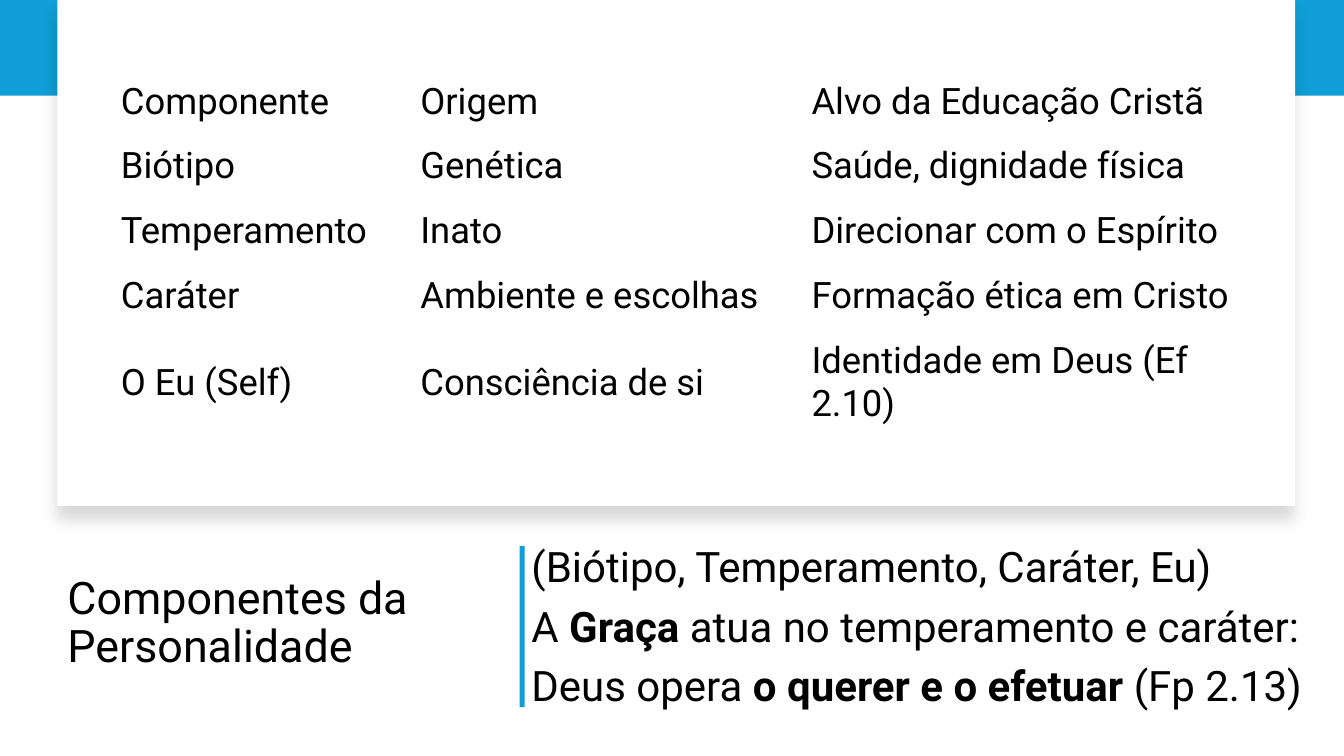
from dataclasses import dataclass

from lxml import etree
from pptx import Presentation
from pptx.dml.color import RGBColor
from pptx.enum.shapes import MSO_SHAPE
from pptx.enum.text import MSO_ANCHOR, MSO_AUTO_SIZE, PP_ALIGN
from pptx.oxml.ns import qn
from pptx.util import Pt

RECTANGLE = MSO_SHAPE.RECTANGLE
MIDDLE = MSO_ANCHOR.MIDDLE
NO_AUTOFIT = MSO_AUTO_SIZE.NONE
LEFT = PP_ALIGN.LEFT

BLUE = RGBColor(0x0F, 0x9E, 0xD5)
WHITE = RGBColor(0xFF, 0xFF, 0xFF)
BLACK = RGBColor(0x00, 0x00, 0x00)
FONT = "Roboto"
TITLE_ONLY = 5


@dataclass(frozen=True)
class Block:
    left: float
    top: float
    width: float
    height: float
    color: RGBColor

    def box(self):
        return Pt(self.left), Pt(self.top), Pt(self.width), Pt(self.height)


BAND = Block(0, 0, 960, 68.4, BLUE)
CARD = Block(41, 0, 884.2, 361.4, WHITE)
DIVIDER = Block(371.2, 390, 3.6, 115.2, BLUE)

COLUMN_WIDTHS = (213.9, 279.4, 323.3)
ROW_HEIGHTS = (46.2, 46.2, 46.2, 46.2, 77.8)
TABLE_ROWS = (
    ("Componente", "Origem", "Alvo da Educação Cristã"),
    ("Biótipo", "Genética", "Saúde, dignidade física"),
    ("Temperamento", "Inato", "Direcionar com o Espírito"),
    ("Caráter", "Ambiente e escolhas", "Formação ética em Cristo"),
    ("O Eu (Self)", "Consciência de si", "Identidade em Deus (Ef 2.10)"),
)

# Each line is a sequence of (text, bold) pieces
SUMMARY_LINES = (
    (("(Biótipo, Temperamento, Caráter, Eu)", False),),
    (("A ", False), ("Graça", True), (" atua no temperamento e caráter:", False)),
    (("Deus opera ", False), ("o querer e o efetuar", True), (" (Fp 2.13)", False)),
)


def style_paragraph(paragraph, size: float) -> None:
    paragraph.alignment = LEFT
    paragraph.font.name = FONT
    paragraph.font.size = Pt(size)
    paragraph.font.color.rgb = BLACK


def add_block(slide, block: Block):
    shape = slide.shapes.add_shape(RECTANGLE, *block.box())
    shape.shadow.inherit = False
    shape.fill.solid()
    shape.fill.fore_color.rgb = block.color
    shape.line.fill.background()
    return shape


def add_soft_shadow(shape) -> None:
    effects = shape._element.spPr.find(qn("a:effectLst"))
    shadow = etree.SubElement(
        effects, qn("a:outerShdw"), blurRad=str(Pt(11)), dist=str(Pt(10)),
        dir="5400000", algn="t", rotWithShape="0")
    color = etree.SubElement(shadow, qn("a:srgbClr"), val=str(BLACK))
    etree.SubElement(color, qn("a:alpha"), val="15000")


def format_title(slide) -> None:
    title = slide.shapes.title
    title.left, title.top = Pt(41), Pt(384.5)
    title.width, title.height = Pt(305.3), Pt(122.4)
    frame = title.text_frame
    frame.text = "Componentes da Personalidade"
    frame.word_wrap = True
    frame.auto_size = NO_AUTOFIT
    frame.vertical_anchor = MIDDLE
    paragraph = frame.paragraphs[0]
    style_paragraph(paragraph, 32)
    paragraph.line_spacing = 0.9


def add_summary(slide) -> None:
    text_box = slide.shapes.add_textbox(Pt(372.5), Pt(381), Pt(586.8), Pt(136))
    frame = text_box.text_frame
    frame.word_wrap = True
    frame.vertical_anchor = MIDDLE
    for index, pieces in enumerate(SUMMARY_LINES):
        paragraph = frame.add_paragraph() if index else frame.paragraphs[0]
        style_paragraph(paragraph, 30)
        paragraph.line_spacing = 0.9
        paragraph.space_before = Pt(10)
        for text, bold in pieces:
            run = paragraph.add_run()
            run.text = text
            run.font.bold = bold


def add_component_table(slide) -> None:
    table = slide.shapes.add_table(
        len(ROW_HEIGHTS), len(COLUMN_WIDTHS), Pt(75.6), Pt(49.7),
        Pt(sum(COLUMN_WIDTHS)), Pt(sum(ROW_HEIGHTS))).table
    table.first_row = False
    table.horz_banding = False
    for column, width in zip(table.columns, COLUMN_WIDTHS):
        column.width = Pt(width)
    for row, height, texts in zip(table.rows, ROW_HEIGHTS, TABLE_ROWS):
        row.height = Pt(height)
        for cell, text in zip(row.cells, texts):
            cell.fill.background()
            cell.vertical_anchor = MIDDLE
            cell.margin_left = cell.margin_right = Pt(10.8)
            cell.margin_top = cell.margin_bottom = Pt(5)
            cell.text = text
            style_paragraph(cell.text_frame.paragraphs[0], 26)


def main() -> None:
    presentation = Presentation()
    presentation.slide_width, presentation.slide_height = Pt(960), Pt(540)
    slide = presentation.slides.add_slide(presentation.slide_layouts[TITLE_ONLY])

    # Title and background blocks
    format_title(slide)
    add_block(slide, BAND)
    add_soft_shadow(add_block(slide, CARD))
    add_block(slide, DIVIDER)

    # Summary and table
    add_summary(slide)
    add_component_table(slide)
    presentation.save("out.pptx")


if __name__ == "__main__":
    main()
